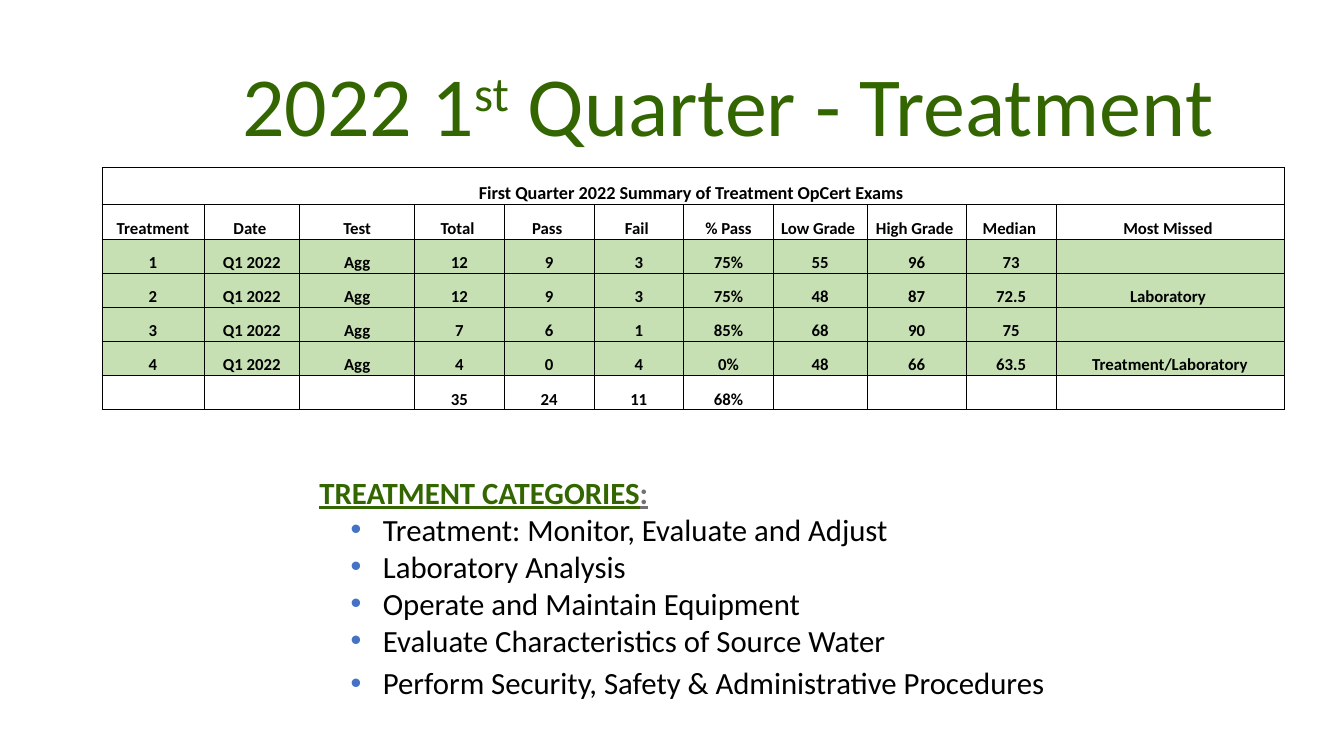
import pptx
import pptx.dml.color
import pptx.enum.text
import pptx.oxml
import pptx.oxml.ns
import pptx.util

Cm = pptx.util.Cm
Pt = pptx.util.Pt
RGBColor = pptx.dml.color.RGBColor
CENTER = pptx.enum.text.PP_ALIGN.CENTER
BOTTOM = pptx.enum.text.MSO_ANCHOR.BOTTOM
NAMESPACE = pptx.oxml.ns.nsdecls("a")

theme = {
    "font": "Calibri",
    "green": "336600",
    "gray": "767171",
    "black": "000000",
    "bullet": "4472C4",
    "row": "C6E0B4",
    "title_size": Pt(60),
    "list_size": Pt(22),
    "caption_size": Pt(13),
    "cell_size": Pt(12),
}


def set_attributes(target, values):
    for name, value in values.items():
        setattr(target, name, value)


def add_run(paragraph, text, color, **format_values):
    run = paragraph.add_run()
    run.text = text
    set_attributes(run.font, {"name": theme["font"], **format_values})
    run.font.color.rgb = RGBColor.from_string(theme[color])
    return run


presentation = pptx.Presentation()
presentation.slide_width = Cm(33.87)
presentation.slide_height = Cm(19.05)
slide = presentation.slides.add_slide(presentation.slide_layouts[6])

title = slide.shapes.add_textbox(Cm(3.45), Cm(1.24), Cm(29.79), Cm(2.79))
set_attributes(title.text_frame, {"word_wrap": True, "vertical_anchor": BOTTOM})
paragraph = title.text_frame.paragraphs[0]
set_attributes(paragraph, {"alignment": CENTER, "line_spacing": 0.9})
for text, baseline in (("2022 1", 0), ("st", 30000), (" Quarter - Treatment", 0)):
    run = add_run(paragraph, text, "green", size=theme["title_size"])
    if baseline:
        run.font._element.set("baseline", str(baseline))

categories = slide.shapes.add_textbox(Cm(7.8), Cm(11.81), Cm(20.02), Cm(6.99))
categories.text_frame.word_wrap = True
heading = categories.text_frame.paragraphs[0]
heading_format = {"size": theme["list_size"], "bold": True, "underline": True}
add_run(heading, "TREATMENT CATEGORIES", "green", **heading_format)
add_run(heading, ":", "gray", **heading_format)
for category in (
    "Treatment: Monitor, Evaluate and Adjust",
    "Laboratory Analysis",
    "Operate and Maintain Equipment",
    "Evaluate Characteristics of Source Water",
    "Perform Security, Safety & Administrative Procedures",
):
    paragraph = categories.text_frame.add_paragraph()
    properties = paragraph._p.get_or_add_pPr()
    properties.set("marL", str(Cm(1.6)))
    properties.set("indent", str(Cm(-0.81)))
    for markup in (
        f'<a:buClr {NAMESPACE}><a:srgbClr val="{theme["bullet"]}"/></a:buClr>',
        f'<a:buFont {NAMESPACE} typeface="Arial"/>',
        f'<a:buChar {NAMESPACE} char="•"/>',
    ):
        properties.append(pptx.oxml.parse_xml(markup))
    add_run(paragraph, category, "black", size=theme["list_size"])
paragraph.space_before = Pt(4)

rows = [
    ["First Quarter 2022 Summary of Treatment OpCert Exams "] + [""] * 10,
    ["Treatment", "Date ", "Test", "Total ", "Pass ", "Fail ", "% Pass",
     "Low Grade ", "High Grade ", "Median ", "Most Missed "],
    ["1", "Q1 2022", "Agg", "12", "9", "3", "75%", "55", "96", "73", ""],
    ["2", "Q1 2022", "Agg", "12", "9", "3", "75%", "48", "87", "72.5", "Laboratory "],
    ["3", "Q1 2022", "Agg", "7", "6", "1", "85%", "68", "90", "75", ""],
    ["4", "Q1 2022", "Agg", "4", "0", "4", "0%", "48", "66", "63.5", "Treatment/Laboratory"],
    ["", "", "", "35", "24", "11", "68%", "", "", "", ""],
]
widths = [2.57, 2.41, 2.9] + [2.26] * 4 + [2.36, 2.51, 2.26, 5.74]
heights = [0.94] + [0.86] * 6
cell_format = {
    "margin_left": Cm(0.02),
    "margin_right": Cm(0.02),
    "margin_top": Cm(0.02),
    "margin_bottom": 0,
    "vertical_anchor": BOTTOM,
}

table = slide.shapes.add_table(
    len(rows), len(widths), Cm(2.57), Cm(4.22), Cm(sum(widths)), Cm(sum(heights))
).table
set_attributes(table, {"first_row": False, "horz_banding": False})
for column, width in zip(table.columns, widths):
    column.width = Cm(width)
for row, height in zip(table.rows, heights):
    row.height = Cm(height)
table.cell(0, 0).merge(table.cell(0, len(widths) - 1))

for row_index, row_texts in enumerate(rows):
    size = theme["cell_size"] if row_index else theme["caption_size"]
    for column_index, text in enumerate(row_texts):
        cell = table.cell(row_index, column_index)
        set_attributes(cell, cell_format)
        properties = cell._tc.get_or_add_tcPr()
        for side in ("lnL", "lnR", "lnT", "lnB"):
            properties.append(pptx.oxml.parse_xml(
                f'<a:{side} {NAMESPACE} w="{Pt(0.5)}"><a:solidFill>'
                f'<a:srgbClr val="{theme["black"]}"/></a:solidFill></a:{side}>'
            ))
        if 2 <= row_index <= 5:
            cell.fill.solid()
            cell.fill.fore_color.rgb = RGBColor.from_string(theme["row"])
        else:
            cell.fill.background()
        paragraph = cell.text_frame.paragraphs[0]
        paragraph.alignment = CENTER
        if text:
            add_run(paragraph, text, "black", size=size, bold=True)

presentation.save("out.pptx")
